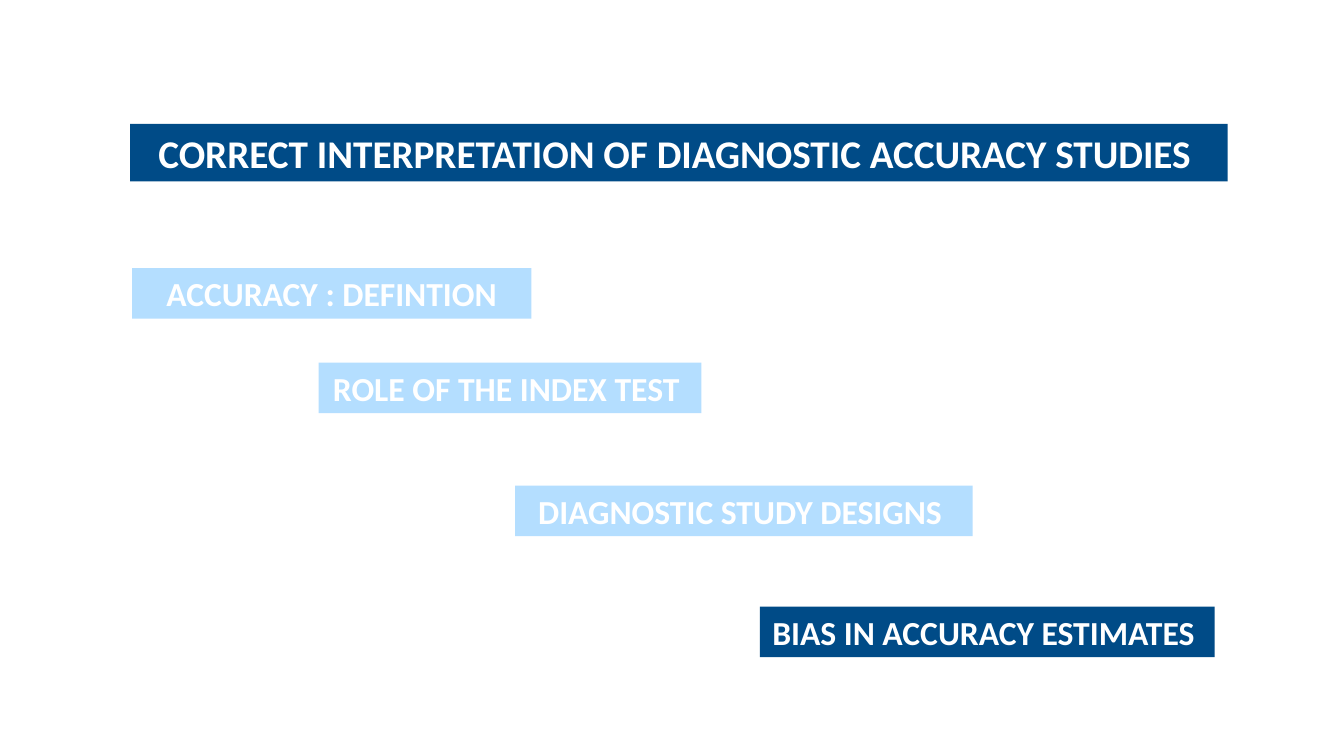
from pptx import Presentation
from pptx.dml.color import RGBColor
from pptx.enum.shapes import MSO_SHAPE
from pptx.enum.text import MSO_ANCHOR, MSO_AUTO_SIZE, PP_ALIGN
from pptx.util import Cm, Pt

COLORS = {"current": "004B87", "muted": "B4DEFF", "text": "FFFFFF"}

# Content: text, then left, top, width in cm, and colour
TITLE = "CORRECT INTERPRETATION OF DIAGNOSTIC ACCURACY STUDIES "
TITLE_BOX = (3.28, 3.12, 27.66, 1.45)
TOPICS = [
    ("ACCURACY : DEFINTION", 3.33, 6.76, 10.06, "muted"),
    ("ROLE OF THE INDEX TEST ", 8.03, 9.14, 9.65, "muted"),
    ("DIAGNOSTIC STUDY DESIGNS ", 12.98, 12.24, 11.53, "muted"),
    ("BIAS IN ACCURACY ESTIMATES ", 19.15, 15.29, 11.46, "current"),
]
TOPIC_HEIGHT = 1.27

FRAME_FORMAT = {
    "word_wrap": True,
    "auto_size": MSO_AUTO_SIZE.NONE,
    "vertical_anchor": MSO_ANCHOR.MIDDLE,
    "margin_left": Cm(0.25),
    "margin_right": Cm(0.25),
    "margin_top": Cm(0.13),
    "margin_bottom": Cm(0.13),
}


def set_attributes(target, values):
    for name, value in values.items():
        setattr(target, name, value)


def format_banner(shape, text, size, color):
    shape.fill.solid()
    shape.fill.fore_color.rgb = RGBColor.from_string(COLORS[color])
    shape.line.fill.background()
    set_attributes(shape.text_frame, FRAME_FORMAT)
    paragraph = shape.text_frame.paragraphs[0]
    set_attributes(paragraph, {"alignment": PP_ALIGN.CENTER, "line_spacing": 1.0})
    run = paragraph.add_run()
    run.text = text
    set_attributes(run.font, {"name": "Calibri", "size": Pt(size), "bold": True})
    run.font.color.rgb = RGBColor.from_string(COLORS["text"])


def main():
    presentation = Presentation()
    presentation.slide_width, presentation.slide_height = Cm(33.87), Cm(19.05)
    slide = presentation.slides.add_slide(presentation.slide_layouts[5])

    # Title banner
    title = slide.shapes.title
    names = ("left", "top", "width", "height")
    set_attributes(title, dict(zip(names, map(Cm, TITLE_BOX))))
    format_banner(title, TITLE, 28, "current")

    # Descending steps of topics
    for text, left, top, width, color in TOPICS:
        box = map(Cm, (left, top, width, TOPIC_HEIGHT))
        topic = slide.shapes.add_shape(MSO_SHAPE.RECTANGLE, *box)
        topic.shadow.inherit = False
        format_banner(topic, text, 24, color)

    presentation.save("out.pptx")


if __name__ == "__main__":
    main()
